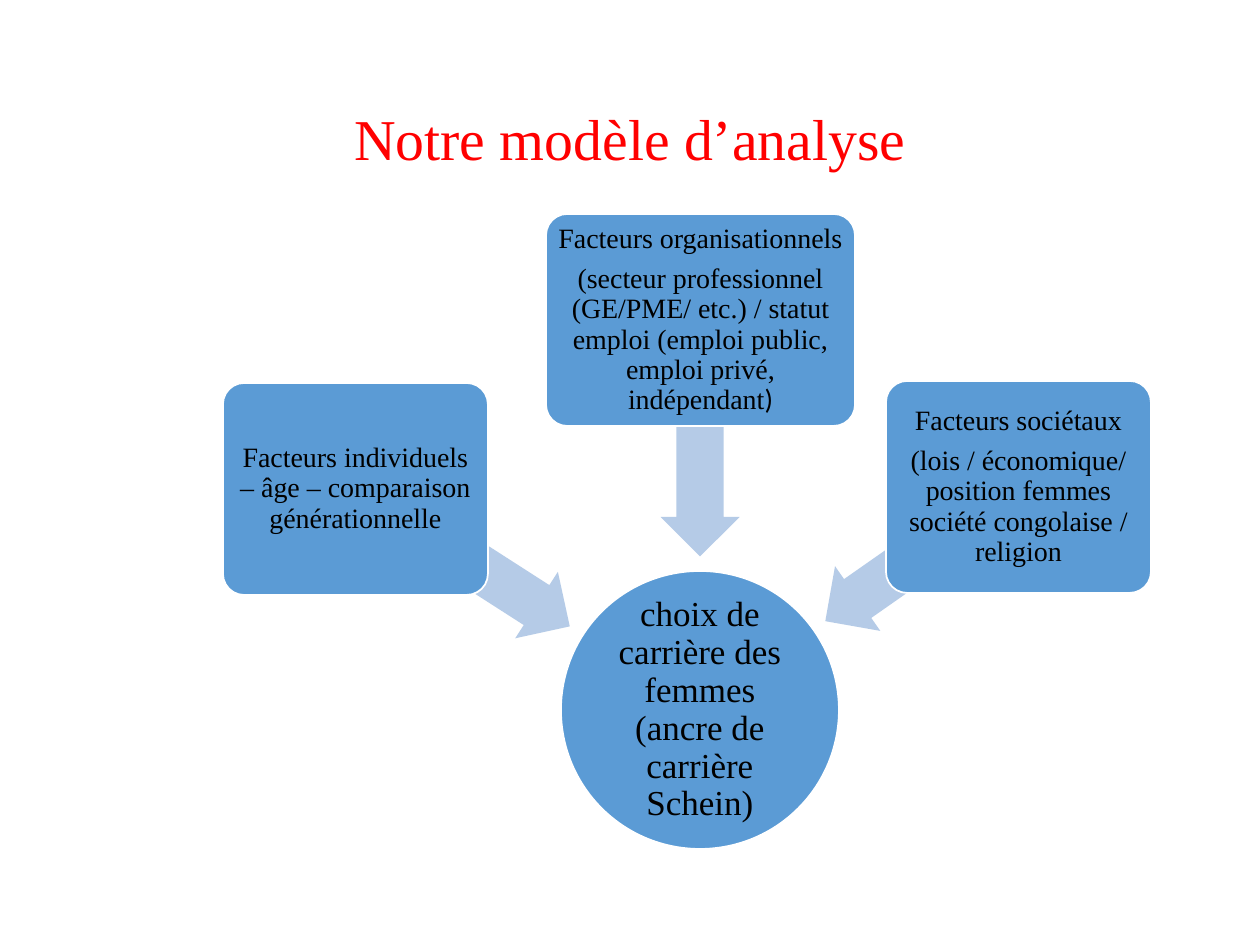
from pptx import Presentation
from pptx.dml.color import RGBColor
from pptx.enum.shapes import MSO_SHAPE
from pptx.enum.text import MSO_ANCHOR, PP_ALIGN
from pptx.util import Pt

ROUNDED, OVAL, ARROW = MSO_SHAPE.ROUNDED_RECTANGLE, MSO_SHAPE.OVAL, MSO_SHAPE.LEFT_ARROW
MIDDLE, CENTER = MSO_ANCHOR.MIDDLE, PP_ALIGN.CENTER
PX = 914400 / 126
THEME = {
    "title": RGBColor(0xFF, 0x00, 0x00),
    "text": RGBColor(0x00, 0x00, 0x00),
    "node": RGBColor(0x5B, 0x9B, 0xD5),
    "arrow": RGBColor(0xB5, 0xCB, 0xE7),
    "edge": RGBColor(0xFF, 0xFF, 0xFF),
    "font": "Times New Roman",
    "alt_font": "Calibri",
    "title_size": 33,
    "goal_size": 20,
    "factor_size": 16,
}


def px(*values):
    return [round(v * PX) for v in values]


def write(sp, paragraphs, size, color, inset, after=0):
    tf = sp.text_frame
    margin = px(inset)[0]
    frame = {"word_wrap": True, "vertical_anchor": MIDDLE, "margin_left": margin,
             "margin_right": margin, "margin_top": margin, "margin_bottom": margin}
    for name, value in frame.items():
        setattr(tf, name, value)
    for i, runs in enumerate(paragraphs):
        p = tf.add_paragraph() if i else tf.paragraphs[0]
        layout = {"alignment": CENTER, "line_spacing": 0.9,
                  "space_before": Pt(0), "space_after": Pt(size * after)}
        for name, value in layout.items():
            setattr(p, name, value)
        for text, font in runs:
            r = p.add_run()
            r.text = text
            r.font.name, r.font.size = font, Pt(size)
            r.font.color.rgb = color


prs = Presentation()
prs.slide_width, prs.slide_height = px(1260, 945)
s = prs.slides.add_slide(prs.slide_layouts[5])
main, alt = THEME["font"], THEME["alt_font"]

title = s.shapes.title
title.left, title.top, title.width, title.height = px(87, 50, 1086, 183)
write(title, [[("Notre modèle d’analyse", main)]], THEME["title_size"], THEME["title"], 6)

goal = [[("choix de carrière des femmes (ancre de carrière Schein)", main)]]
individual = [[("Facteurs individuels – âge – comparaison générationnelle", main)]]
organisational = [
    [("Facteurs organisationnels", main)],
    [("(secteur professionnel (GE/PME/ etc.) / statut emploi "
      "(emploi public, emploi privé, indépendant", main), (")", alt)],
]
societal = [
    [("Facteurs sociétaux", main)],
    [("(lois / économique/ position femmes société congolaise / religion", main)],
]
parts = [
    (OVAL, (561, 571, 278, 278), 0, goal),
    (ARROW, (335, 518, 255, 79), 212.7, None),
    (ROUNDED, (223, 383, 265, 212), 0, individual),
    (ARROW, (582, 399, 236, 79), 270, None),
    (ROUNDED, (546, 214, 309, 212), 0, organisational),
    (ARROW, (804, 514, 236, 79), 325, None),
    (ROUNDED, (886, 381, 265, 212), 0, societal),
]
adjustments = {OVAL: [], ARROW: [0.6, 0.5], ROUNDED: [0.1]}

for kind, box, rotation, paragraphs in parts:
    sp = s.shapes.add_shape(kind, *px(*box))
    sp.shadow.inherit = False
    sp.rotation = rotation
    for i, value in enumerate(adjustments[kind]):
        sp.adjustments[i] = value
    sp.fill.solid()
    sp.fill.fore_color.rgb = THEME["arrow" if kind == ARROW else "node"]
    if kind == ARROW:
        sp.line.fill.background()
        continue
    sp.line.color.rgb, sp.line.width = THEME["edge"], Pt(1)
    size, inset = (THEME["goal_size"], 1) if kind == OVAL else (THEME["factor_size"], 4)
    write(sp, paragraphs, size, THEME["text"], inset, 0.35)

prs.save("out.pptx")
